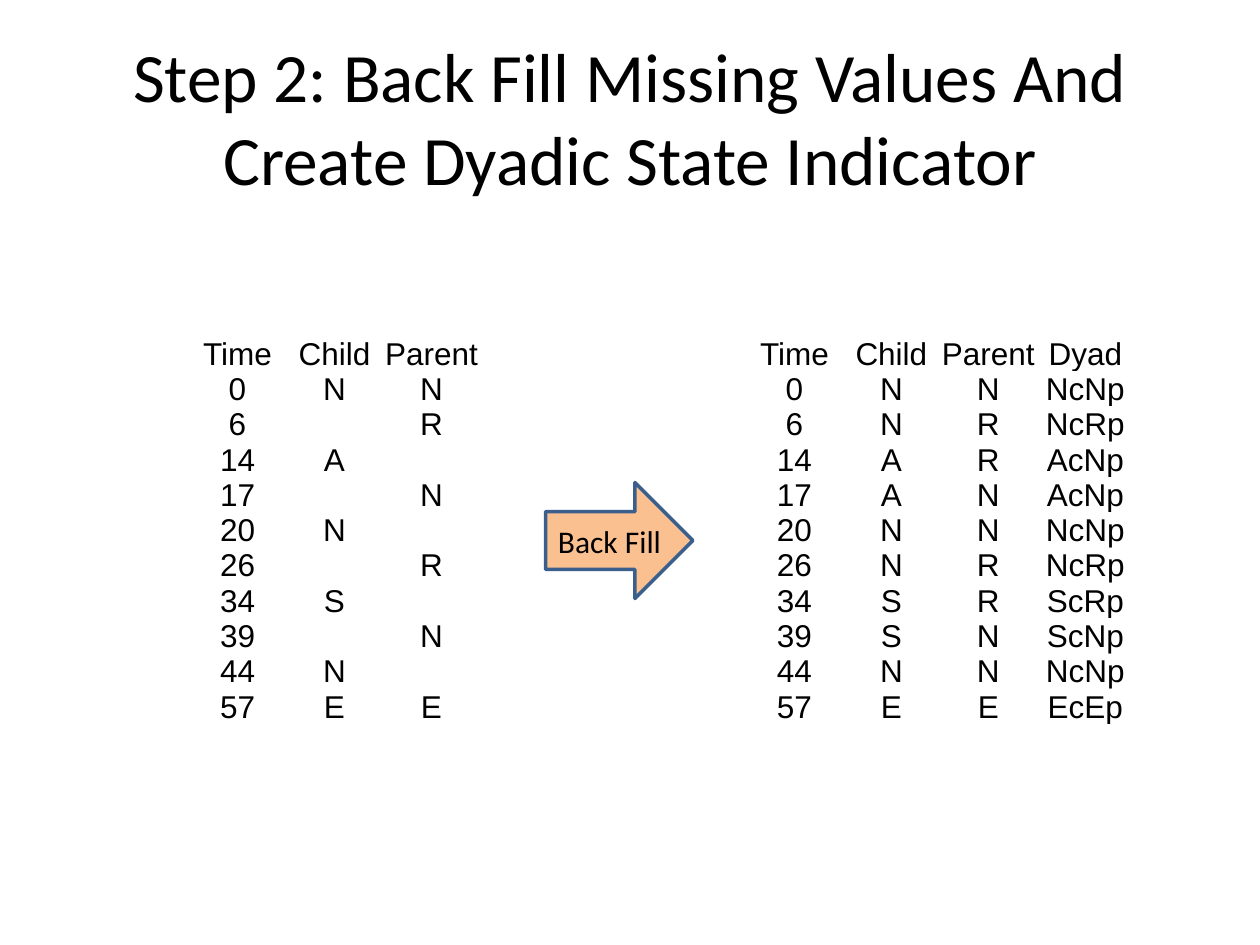
import pptx
import pptx.dml.color
import pptx.enum.shapes
import pptx.enum.text
import pptx.util

Inches = pptx.util.Inches
Pt = pptx.util.Pt
CENTER = pptx.enum.text.PP_ALIGN.CENTER

TITLE = "Step 2: Back Fill Missing Values And Create Dyadic State Indicator"
ARROW_LABEL = "Back Fill"
OBSERVED = [
    ("Time", "Child", "Parent"),
    ("0", "N", "N"),
    ("6", "", "R"),
    ("14", "A", ""),
    ("17", "", "N"),
    ("20", "N", ""),
    ("26", "", "R"),
    ("34", "S", ""),
    ("39", "", "N"),
    ("44", "N", ""),
    ("57", "E", "E"),
]
FILLED = [
    ("Time", "Child", "Parent", "Dyad"),
    ("0", "N", "N", "NcNp"),
    ("6", "N", "R", "NcRp"),
    ("14", "A", "R", "AcNp"),
    ("17", "A", "N", "AcNp"),
    ("20", "N", "N", "NcNp"),
    ("26", "N", "R", "NcRp"),
    ("34", "S", "R", "ScRp"),
    ("39", "S", "N", "ScNp"),
    ("44", "N", "N", "NcNp"),
    ("57", "E", "E", "EcEp"),
]
COLORS = {"text": "000000", "arrow": "FAC090", "outline": "3A5F8C"}
TABLE_TOP, TABLE_HEIGHT = 2.67, 3.3
COLUMN_WIDTH, ROW_HEIGHT = 0.77, 0.23


def color(name):
    return pptx.dml.color.RGBColor.from_string(COLORS[name])


def set_font(para, name, size):
    para.font.name = name
    para.font.size = Pt(size)
    para.font.color.rgb = color("text")


def add_state_table(slide, rows, left):
    column_count = len(rows[0])
    frame = slide.shapes.add_table(
        len(rows), column_count, Inches(left), Inches(TABLE_TOP),
        Inches(COLUMN_WIDTH * column_count), Inches(TABLE_HEIGHT))
    table = frame.table
    table.first_row = table.horz_banding = False
    for column in table.columns:
        column.width = Inches(COLUMN_WIDTH)
    for row, values in zip(table.rows, rows):
        row.height = Inches(ROW_HEIGHT)
        for cell, value in zip(row.cells, values):
            cell.fill.background()
            cell.margin_left = cell.margin_right = 0
            cell.margin_top = cell.margin_bottom = 0
            cell.vertical_anchor = pptx.enum.text.MSO_ANCHOR.BOTTOM
            cell.text = value
            para = cell.text_frame.paragraphs[0]
            para.alignment = CENTER
            set_font(para, "Arial", 18)
    frame.height = Inches(TABLE_HEIGHT)


def add_labelled_arrow(slide):
    group = slide.shapes.add_group_shape()
    arrow = group.shapes.add_shape(
        pptx.enum.shapes.MSO_SHAPE.RIGHT_ARROW,
        Inches(4.33), Inches(3.83), Inches(1.17), Inches(0.92))
    arrow.shadow.inherit = False
    arrow.fill.solid()
    arrow.fill.fore_color.rgb = color("arrow")
    arrow.line.color.rgb = color("outline")
    arrow.line.width = Pt(2)

    label = group.shapes.add_textbox(
        Inches(4.33), Inches(4.09), Inches(1.17), Inches(0.4))
    label.text_frame.word_wrap = True
    label.text_frame.auto_size = pptx.enum.text.MSO_AUTO_SIZE.SHAPE_TO_FIT_TEXT
    label.text_frame.text = ARROW_LABEL
    set_font(label.text_frame.paragraphs[0], "Calibri", 18)


def add_title(slide):
    title = slide.shapes.title
    title.left, title.top = Inches(0.5), Inches(0.3)
    title.width, title.height = Inches(9), Inches(1.25)
    title.text_frame.text = TITLE
    title.text_frame.vertical_anchor = pptx.enum.text.MSO_ANCHOR.MIDDLE
    para = title.text_frame.paragraphs[0]
    para.alignment = CENTER
    set_font(para, "Calibri", 39.6)


def main():
    deck = pptx.Presentation()
    deck.slide_width, deck.slide_height = Inches(10), Inches(7.5)
    slide = deck.slides.add_slide(deck.slide_layouts[5])
    add_title(slide)
    add_state_table(slide, FILLED, 5.92)
    add_state_table(slide, OBSERVED, 1.5)
    add_labelled_arrow(slide)
    deck.save("out.pptx")


if __name__ == "__main__":
    main()
